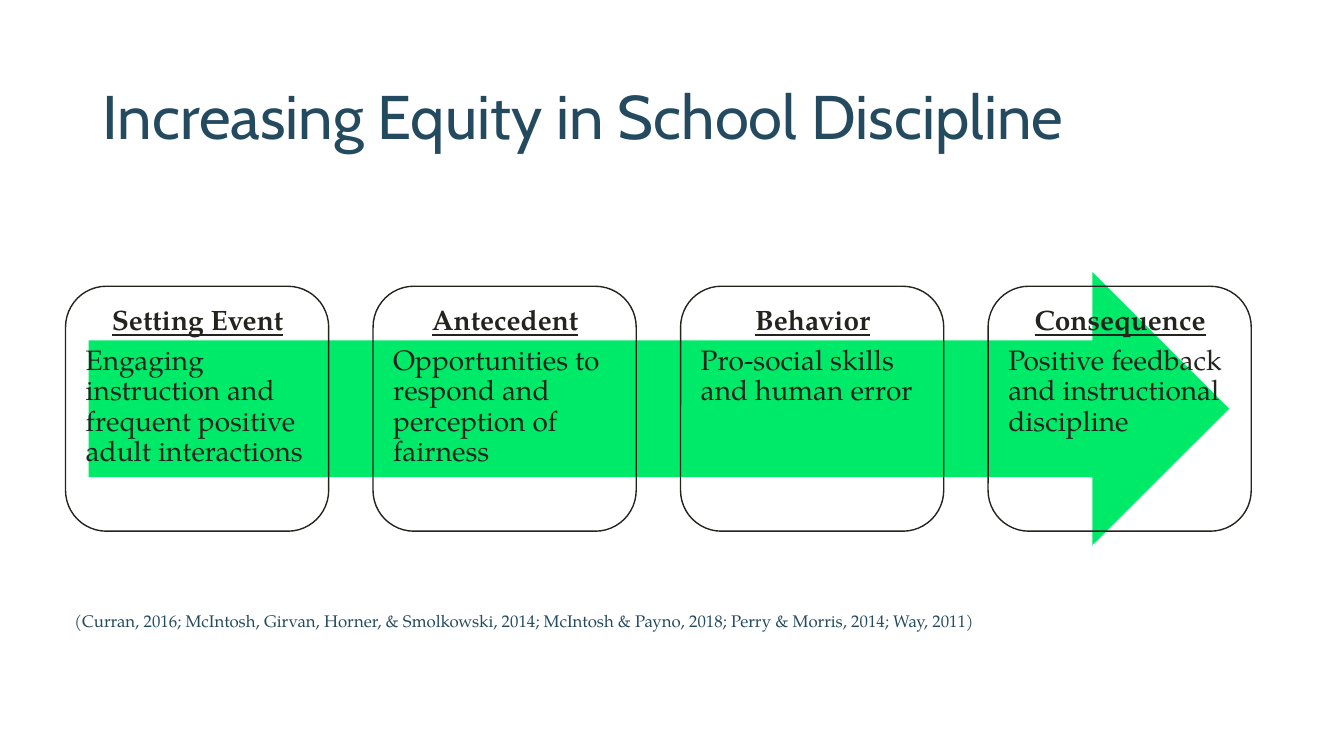
from pptx import Presentation
from pptx.dml.color import RGBColor
from pptx.enum import shapes, text
from pptx.util import Inches, Pt

COLORS = {"navy": "244A5F", "green": "00EA6A", "ink": "24231E"}
BODY = "TeX Gyre Pagella"

prs = Presentation()
prs.slide_width, prs.slide_height = Inches(13.33), Inches(7.5)
s = prs.slides.add_slide(prs.slide_layouts[6])


def add_text(left, top, width, height):
    tf = s.shapes.add_textbox(Inches(left), Inches(top), Inches(width), Inches(height)).text_frame
    tf.word_wrap = True
    return tf


def add_run(p, words, size, font, color):
    r = p.add_run()
    r.text = words
    r.font.size = Pt(size)
    r.font.name = font
    r.font.color.rgb = RGBColor.from_string(COLORS[color])
    return r


# Title
tf = add_text(0.92, 0.46, 11.5, 1.45)
tf.vertical_anchor = text.MSO_ANCHOR.MIDDLE
p = tf.paragraphs[0]
p.line_spacing = 0.9
add_run(p, "Increasing Equity in School Discipline", 44, "Cabin", "navy")

# Arrow behind the stages
arrow = s.shapes.add_shape(shapes.MSO_SHAPE.RIGHT_ARROW,
                           Inches(0.88), Inches(2.7), Inches(11.31), Inches(2.71))
arrow.shadow.inherit = False
arrow.fill.solid()
arrow.fill.fore_color.rgb = RGBColor.from_string(COLORS["green"])
arrow.line.fill.background()

# Four stages, evenly spaced
stages = [
    ("Setting Event", "Engaging instruction and frequent positive adult interactions"),
    ("Antecedent", "Opportunities to respond and perception of fairness"),
    ("Behavior", "Pro-social skills and human error"),
    ("Consequence", "Positive feedback and instructional discipline"),
]
for i, (heading, detail) in enumerate(stages):
    left = 0.65 + 3.05 * i
    sp = s.shapes.add_shape(shapes.MSO_SHAPE.ROUNDED_RECTANGLE,
                            Inches(left), Inches(2.84), Inches(2.61), Inches(2.43))
    sp.shadow.inherit = False
    sp.fill.background()
    sp.line.color.rgb = RGBColor.from_string(COLORS["ink"])
    sp.line.width = Pt(1)

    tf = add_text(left + 0.12, 2.96, 2.38, 2.19)
    tf.margin_left = tf.margin_right = tf.margin_top = tf.margin_bottom = Inches(0.08)
    p = tf.paragraphs[0]
    p.alignment = text.PP_ALIGN.CENTER
    r = add_run(p, heading, 20, BODY, "ink")
    r.font.bold = r.font.underline = True
    add_run(tf.add_paragraph(), detail, 20, BODY, "ink")
    for p in tf.paragraphs:
        p.line_spacing = 0.9
        p.space_after = Pt(7)

# Citations
tf = add_text(0.64, 6.01, 9.26, 0.3)
tf.auto_size = text.MSO_AUTO_SIZE.SHAPE_TO_FIT_TEXT
add_run(tf.paragraphs[0],
        "(Curran, 2016; McIntosh, Girvan, Horner, & Smolkowski, 2014; "
        "McIntosh & Payno, 2018; Perry & Morris, 2014; Way, 2011)",
        12, BODY, "navy")

prs.save("out.pptx")
